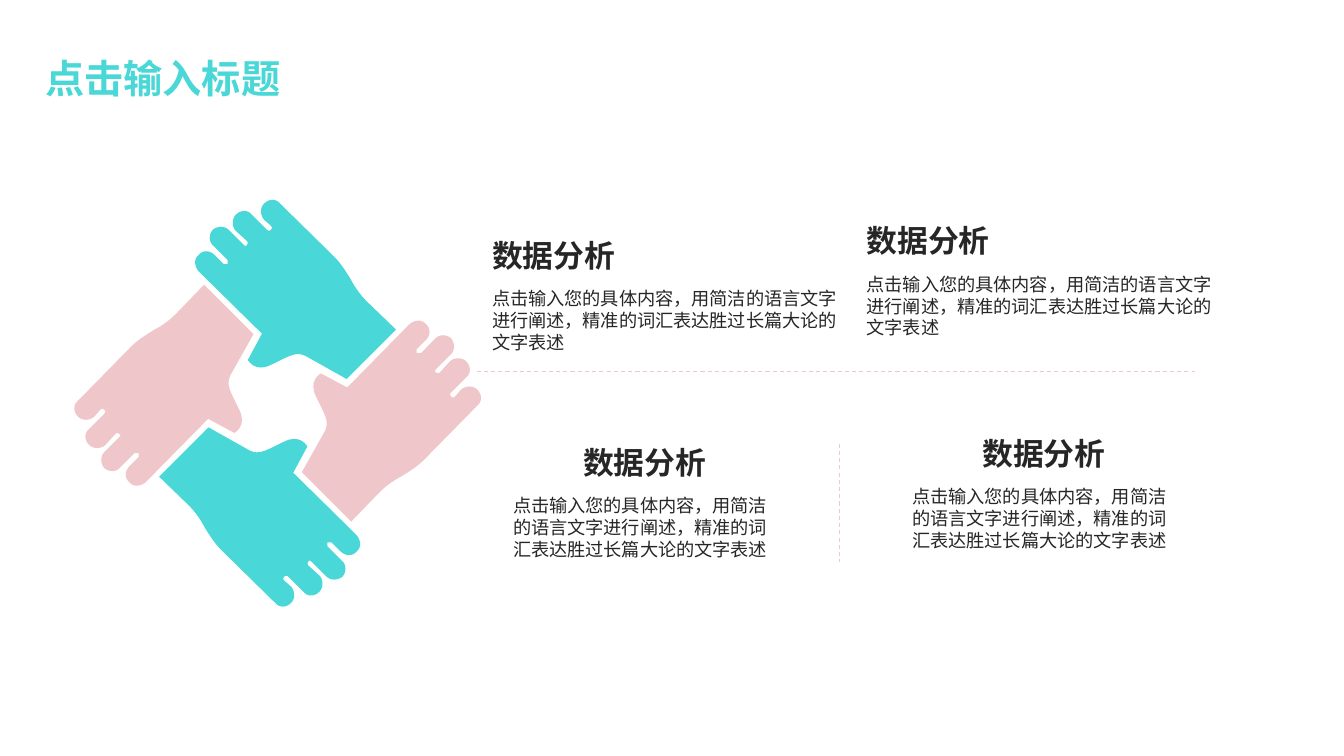
from lxml import etree
from pptx import Presentation
from pptx.dml.color import RGBColor
from pptx.enum.dml import MSO_LINE
from pptx.enum.lang import MSO_LANGUAGE_ID
from pptx.enum.shapes import MSO_CONNECTOR
from pptx.enum.text import MSO_ANCHOR, MSO_AUTO_SIZE, PP_ALIGN
from pptx.oxml.ns import qn
from pptx.util import Cm, Pt

TEAL = RGBColor(0x49, 0xD8, 0xD7)
PINK = RGBColor(0xEF, 0xC7, 0xCB)
DARK = RGBColor(0x26, 0x26, 0x26)

HEADING = "数据分析"
BODY = "点击输入您的具体内容，用简洁的语言文字进行阐述，精准的词汇表达胜过长篇大论的文字表述"

HAND_UNIT = Cm(0.0254)
HAND_CENTRE = (275.5, 400)
CURVE_STEPS = 8
# Two numbers make a straight segment, six make a cubic curve.
HAND_OUTLINE = [
    (248, 447), (257, 451, 262, 448, 280, 439), (298, 429, 305, 443, 305, 443),
    (291, 469), (354, 531), (358, 536, 359, 543, 354, 547),
    (350, 552, 343, 552, 338, 547), (329, 538),
    (328, 538, 328, 538, 327, 538), (327, 538, 326, 538, 325, 538),
    (325, 539, 325, 541, 325, 542), (339, 556),
    (344, 560, 344, 567, 340, 572), (335, 576, 328, 576, 324, 572),
    (309, 557), (309, 557, 308, 556, 307, 556),
    (307, 556, 306, 557, 306, 557), (305, 558, 305, 560, 306, 561),
    (317, 571), (319, 573, 320, 576, 320, 579),
    (320, 582, 319, 585, 317, 587), (312, 592, 305, 592, 301, 587),
    (286, 572), (285, 571, 283, 571, 282, 572),
    (282, 573, 281, 573, 281, 574), (281, 575, 282, 575, 282, 576),
    (289, 582), (293, 587, 293, 594, 289, 598),
    (284, 603, 277, 603, 273, 598), (219, 545),
    (213, 539, 208, 531, 203, 523), (199, 515, 193, 507, 187, 501),
    (158, 473), (207, 424),
]


def curve_point(start, segment, t):
    x1, y1, x2, y2, x3, y3 = segment
    u = 1 - t
    return tuple(
        u ** 3 * a + 3 * u * u * t * b + 3 * u * t * t * c + t ** 3 * d
        for a, b, c, d in zip(start, (x1, y1), (x2, y2), (x3, y3))
    )


def hand_points():
    points = [HAND_OUTLINE[0]]
    for segment in HAND_OUTLINE[1:]:
        if len(segment) == 2:
            points.append(segment)
        else:
            start = points[-1]
            points += [curve_point(start, segment, step / CURVE_STEPS)
                       for step in range(1, CURVE_STEPS + 1)]
    return points


def write_text(frame, text, *, size, color, font, bold=False, margins=True, wrap=True):
    frame.word_wrap = wrap
    frame.auto_size = MSO_AUTO_SIZE.SHAPE_TO_FIT_TEXT
    frame.vertical_anchor = MSO_ANCHOR.TOP
    if not margins:
        frame.margin_left = frame.margin_top = frame.margin_right = frame.margin_bottom = 0
    paragraph = frame.paragraphs[0]
    paragraph.alignment = PP_ALIGN.LEFT
    run = paragraph.add_run()
    run.text = text
    run.font.name = font
    run.font.size = Pt(size)
    run.font.bold = bold
    run.font.color.rgb = color
    run.font.language_id = MSO_LANGUAGE_ID.SIMPLIFIED_CHINESE


class SlideBuilder:
    font = "Lato"

    def __init__(self, slide):
        self.slide = slide

    def title(self, text, left, top, width, height):
        shape = self.slide.shapes.title
        shape.left, shape.top, shape.width, shape.height = map(Cm, (left, top, width, height))
        write_text(shape.text_frame, text, size=28, color=TEAL, font=self.font,
                   bold=True, wrap=False)

    def text(self, text, left, top, width, height, **style):
        box = self.slide.shapes.add_textbox(*map(Cm, (left, top, width, height)))
        write_text(box.text_frame, text, color=DARK, font=self.font, margins=False, **style)

    def text_block(self, left, top, width, heading_indent):
        self.text(BODY, left, top + 1.28, width, 1.68, size=13)
        self.text(HEADING, left + heading_indent, top, 5, 0.94, size=22, bold=True)

    def dashed_line(self, *ends):
        line = self.slide.shapes.add_connector(MSO_CONNECTOR.STRAIGHT, *map(Cm, ends))
        line.line.color.rgb = PINK
        line.line.width = Pt(0.75)
        line.line.dash_style = MSO_LINE.DASH
        properties = line._element.spPr
        etree.SubElement(properties, qn("a:effectLst"))

    def hand(self, points, quarter_turns, color):
        centre_x, centre_y = HAND_CENTRE
        turned = []
        for x, y in points:
            x, y = x - centre_x, y - centre_y
            for _ in range(quarter_turns):
                x, y = -y, x
            turned.append(((x + centre_x) * HAND_UNIT, (y + centre_y) * HAND_UNIT))
        builder = self.slide.shapes.build_freeform(*turned[0])
        builder.add_line_segments(turned[1:], close=True)
        shape = builder.convert_to_shape()
        shape.shadow.inherit = False
        shape.fill.solid()
        shape.fill.fore_color.rgb = color
        shape.line.fill.background()


def main():
    presentation = Presentation()
    presentation.slide_width = Cm(33.87)
    presentation.slide_height = Cm(19.05)
    slide = presentation.slides.add_slide(presentation.slide_layouts[5])
    builder = SlideBuilder(slide)

    builder.title("点击输入标题", 0.89, 1.24, 6.5, 1.45)
    points = hand_points()
    for quarter_turns, color in enumerate((TEAL, PINK, TEAL, PINK)):
        builder.hand(points, quarter_turns, color)
    builder.dashed_line(12.01, 9.37, 30.12, 9.37)
    builder.dashed_line(21.16, 11.18, 21.16, 14.15)
    for left, top, width, heading_indent in (
        (12.4, 5.97, 8.76, 0),
        (21.84, 5.6, 8.76, 0),
        (12.93, 11.18, 6.6, 1.77),
        (22.99, 10.95, 6.6, 1.77),
    ):
        builder.text_block(left, top, width, heading_indent)

    presentation.save("out.pptx")


if __name__ == "__main__":
    main()
